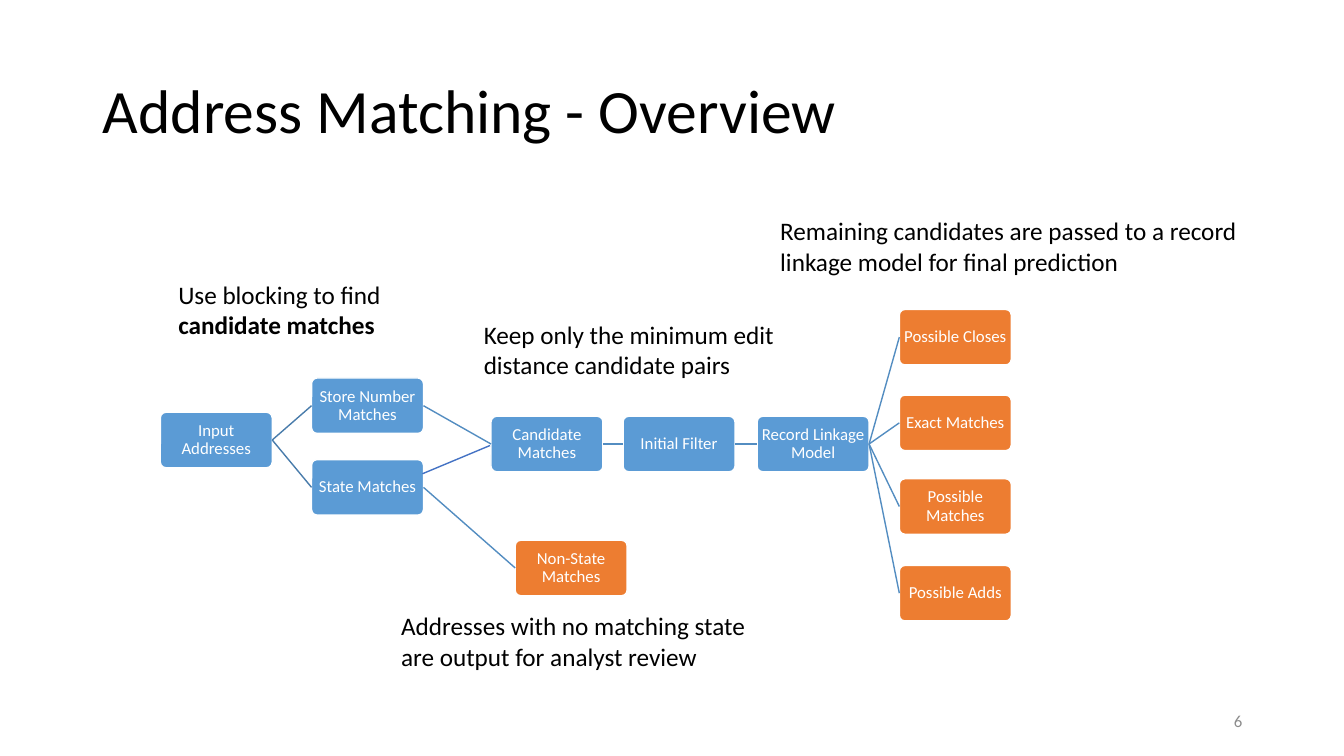
from lxml.etree import SubElement
from pptx import Presentation
from pptx.dml.color import RGBColor
from pptx.enum.shapes import MSO_CONNECTOR, MSO_SHAPE
from pptx.enum.text import MSO_ANCHOR, MSO_AUTO_SIZE, PP_ALIGN
from pptx.oxml.ns import qn
from pptx.util import Inches, Pt

COLORS = {
    "black": "000000",
    "white": "FFFFFF",
    "gray": "8C8C8C",
    "step": "5B9BD5",
    "result": "ED7D31",
    "input_link": "497CAB",
    "link": "538DC1",
    "state_link": "4472C4",
}
NODE_WIDTH, NODE_HEIGHT = 1.11, 0.55
LEFT_SITE, RIGHT_SITE = 1, 3

NODES = [
    ("Input Addresses", 1.59, 4.09, "step"),
    ("Store Number Matches", 3.09, 3.75, "step"),
    ("State Matches", 3.09, 4.56, "step"),
    ("Candidate Matches", 4.87, 4.13, "step"),
    ("Initial Filter", 6.18, 4.13, "step"),
    ("Record Linkage Model", 7.51, 4.13, "step"),
    ("Possible Closes", 8.92, 3.07, "result"),
    ("Exact Matches", 8.92, 3.92, "result"),
    ("Possible Matches", 8.92, 4.75, "result"),
    ("Possible Adds", 8.92, 5.61, "result"),
    ("Non-State Matches", 5.11, 5.36, "result"),
]
LINKS = {
    "Input Addresses": ["Store Number Matches", "State Matches"],
    "Store Number Matches": ["Candidate Matches"],
    "State Matches": ["Non-State Matches"],
    "Candidate Matches": ["Initial Filter"],
    "Initial Filter": ["Record Linkage Model"],
    "Record Linkage Model": ["Possible Closes", "Exact Matches", "Possible Matches", "Possible Adds"],
}
NOTES = [
    (["Use blocking to find ", "candidate matches"], 1.67, 2.72, 2.9),
    (["Keep only the minimum edit distance candidate pairs"], 4.7, 3.12, 3.1),
    (["Addresses with no matching state are output for analyst review"], 3.88, 6.01, 3.93),
    (["Remaining candidates are passed to a record linkage model for final prediction"], 7.64, 2.09, 4.78),
]


def rgb(color):
    return RGBColor.from_string(COLORS[color])


class FlowSlide:
    font_name = "Calibri"

    def __init__(self, presentation):
        self.slide = presentation.slides.add_slide(presentation.slide_layouts[5])
        self.shapes = self.slide.shapes

    def style(self, paragraph, size, color, align=PP_ALIGN.LEFT):
        paragraph.alignment = align
        for run in paragraph.runs:
            run.font.name = self.font_name
            run.font.size = Pt(size)
            run.font.color.rgb = rgb(color)

    def title(self, text, left, top, width, height):
        heading = self.shapes.title
        heading.left, heading.top = Inches(left), Inches(top)
        heading.width, heading.height = Inches(width), Inches(height)
        frame = heading.text_frame
        frame.text = text
        frame.auto_size = MSO_AUTO_SIZE.NONE
        frame.vertical_anchor = MSO_ANCHOR.MIDDLE
        frame.paragraphs[0].line_spacing = 0.9
        self.style(frame.paragraphs[0], 44, "black")

    def node(self, text, left, top, color):
        box = self.shapes.add_shape(
            MSO_SHAPE.ROUNDED_RECTANGLE,
            Inches(left), Inches(top), Inches(NODE_WIDTH), Inches(NODE_HEIGHT),
        )
        box.adjustments[0] = 0.1
        box.shadow.inherit = False
        box.fill.solid()
        box.fill.fore_color.rgb = rgb(color)
        box.line.color.rgb = rgb("white")
        box.line.width = Pt(1)
        frame = box.text_frame
        frame.text = text
        frame.word_wrap = True
        frame.vertical_anchor = MSO_ANCHOR.MIDDLE
        frame.margin_left = frame.margin_right = Inches(0.02)
        frame.margin_top = frame.margin_bottom = Inches(0.02)
        frame.paragraphs[0].line_spacing = 0.9
        self.style(frame.paragraphs[0], 12, "white", PP_ALIGN.CENTER)
        return box

    def line(self, start, end, color):
        link = self.shapes.add_connector(
            MSO_CONNECTOR.STRAIGHT, *(Inches(value) for value in (*start, *end))
        )
        link.line.color.rgb = rgb(color)
        link.line.width = Pt(1)
        SubElement(link._element.spPr, qn("a:effectLst"))
        return link

    def link(self, source, target, color):
        link = self.line((0, 0), (1, 1), color)
        link.begin_connect(source, RIGHT_SITE)
        link.end_connect(target, LEFT_SITE)

    def text(self, parts, left, top, width, height, size=18, color="black",
             align=PP_ALIGN.LEFT, anchor=MSO_ANCHOR.TOP):
        box = self.shapes.add_textbox(Inches(left), Inches(top), Inches(width), Inches(height))
        frame = box.text_frame
        frame.word_wrap = True
        frame.vertical_anchor = anchor
        paragraph = frame.paragraphs[0]
        for index, part in enumerate(parts):
            run = paragraph.add_run()
            run.text = part
            run.font.bold = index > 0
        self.style(paragraph, size, color, align)


def main():
    presentation = Presentation()
    presentation.slide_width = Inches(13.33)
    presentation.slide_height = Inches(7.5)
    overview = FlowSlide(presentation)
    overview.title("Address Matching - Overview", 0.92, 0.4, 11.5, 1.45)
    overview.text(["6"], 9.42, 6.95, 3, 0.4, 12, "gray", PP_ALIGN.RIGHT, MSO_ANCHOR.MIDDLE)

    steps = {text: overview.node(text, left, top, color) for text, left, top, color in NODES}
    for source, targets in LINKS.items():
        color = "input_link" if source == "Input Addresses" else "link"
        for target in targets:
            overview.link(steps[source], steps[target], color)
    overview.line((4.19, 4.7), (4.86, 4.42), "state_link")

    for parts, left, top, width in NOTES:
        overview.text(parts, left, top, width, 0.71)
    presentation.save("out.pptx")


if __name__ == "__main__":
    main()
